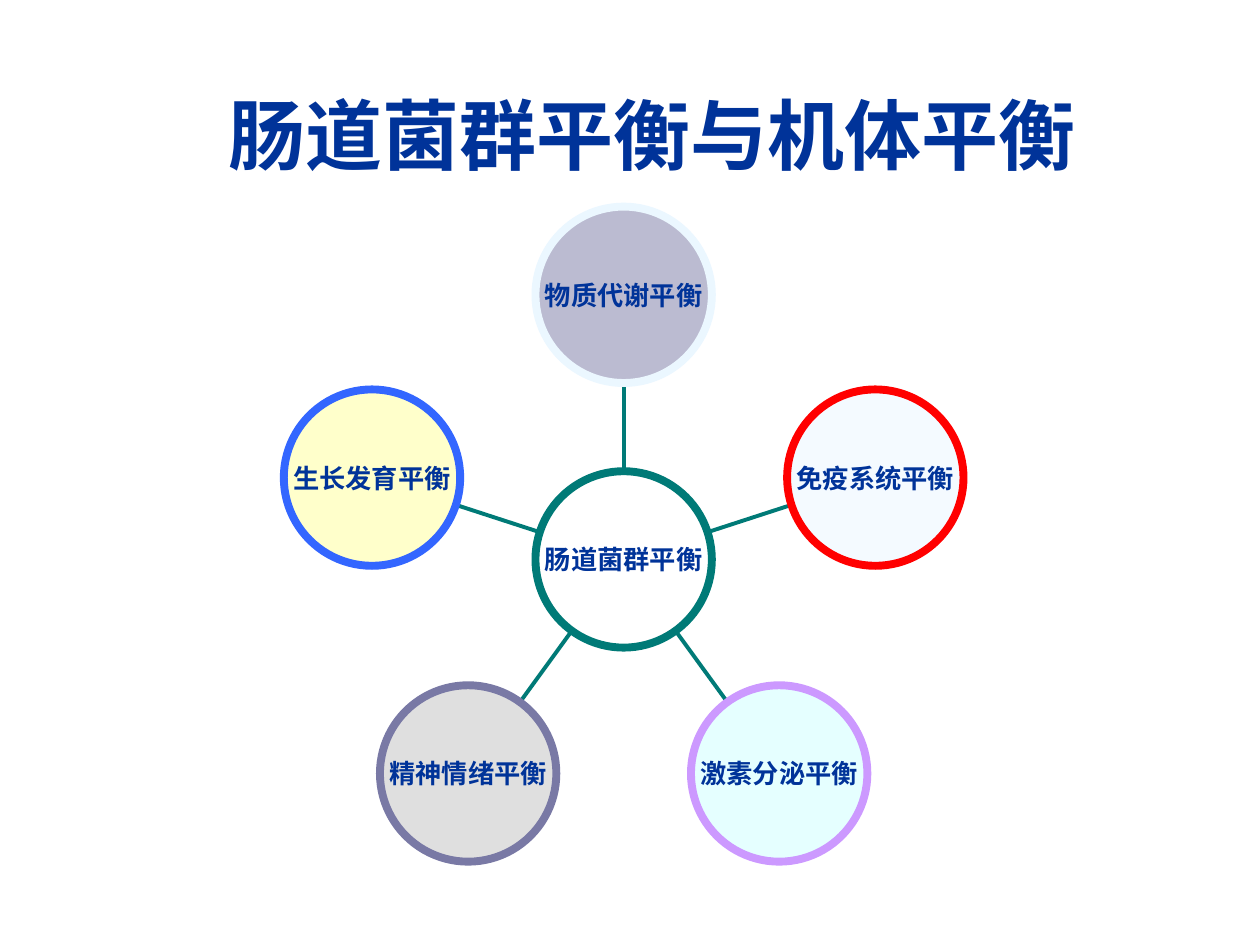
from math import cos, pi, sin

from lxml.etree import SubElement
from pptx import Presentation
from pptx.dml.color import RGBColor
from pptx.enum.shapes import MSO_CONNECTOR, MSO_SHAPE
from pptx.enum.text import MSO_ANCHOR, PP_ALIGN
from pptx.oxml.ns import qn
from pptx.util import Inches, Pt

NAVY, TEAL, CJK = "003399", "007A77", "Noto Sans CJK SC"
HUB = ("肠道菌群平衡", "FFFFFF", TEAL)
RING = [
    ("物质代谢平衡", "7979A5", "EBF7FF"),
    ("免疫系统平衡", "EBF7FF", "FF0000"),
    ("激素分泌平衡", "CCFFFF", "CC99FF"),
    ("精神情绪平衡", "C0C0C0", "7979A5"),
    ("生长发育平衡", "FFFF99", "3366FF"),
]


def paint(part, tone):
    """Give a fill or font colour a solid hex tone."""
    if hasattr(part, "solid"):
        part.solid()
        part.fore_color.rgb = RGBColor.from_string(tone)
    else:
        part.color.rgb = RGBColor.from_string(tone)


def write(frame, text, size, face):
    """Put one bold, centred line of text in a frame."""
    frame.text = text
    frame.vertical_anchor = MSO_ANCHOR.MIDDLE
    line = frame.paragraphs[0]
    line.alignment = PP_ALIGN.CENTER
    font = line.font
    font.size, font.bold, font.name = Pt(size), True, face
    paint(font, NAVY)
    SubElement(line._p.pPr.find(qn("a:defRPr")), qn("a:ea"), typeface=CJK)


def add_title(slide, box):
    """Place and format the title in its box."""
    title = slide.shapes.title
    title.left, title.top, title.width, title.height = map(Inches, box)
    write(title.text_frame, "肠道菌群平衡与机体平衡", 44, CJK)


def add_disc(slide, x, y, size, label, tone, edge):
    """Add a half-transparent labelled circle centred on a point."""
    box = (x - size / 2, y - size / 2, size, size)
    disc = slide.shapes.add_shape(MSO_SHAPE.OVAL, *map(Inches, box))
    disc.shadow.inherit = False
    paint(disc.fill, tone)
    hue = disc._element.spPr.find(qn("a:solidFill"))[0]
    SubElement(hue, qn("a:alpha"), val="50000")
    paint(disc.line, edge)
    disc.line.width = Pt(4.5)
    frame = disc.text_frame
    frame.word_wrap = False
    frame.margin_left = frame.margin_right = 0
    frame.margin_top = frame.margin_bottom = 0
    write(frame, label, 15, "Arial")


def add_spoke(slide, start, end):
    """Add a plain teal line between two points."""
    spoke = slide.shapes.add_connector(
        MSO_CONNECTOR.STRAIGHT, *map(Inches, start + end))
    paint(spoke.line, TEAL)
    spoke.line.width = Pt(2.25)
    SubElement(spoke._element.spPr, qn("a:effectLst"))


def add_wheel(slide, box):
    """Set five discs evenly around a hub, joined by spokes."""
    left, top, size = box
    x, y = left + size / 2, top + size / 2
    disc = size / 4
    orbit = (size - disc) / 2

    def spot(angle, reach):
        """Return the point at an angle from the top of the wheel."""
        return x + reach * sin(angle), y - reach * cos(angle)

    for i, node in enumerate(RING):
        angle = 2 * pi * i / len(RING)
        add_spoke(slide, spot(angle, disc / 2), spot(angle, orbit - disc / 2))
        add_disc(slide, *spot(angle, orbit), disc, *node)
    add_disc(slide, x, y, disc, *HUB)


def main():
    """Build and save the slide."""
    deck = Presentation()
    deck.slide_width, deck.slide_height = Inches(10), Inches(7.5)
    slide = deck.slides.add_slide(deck.slide_layouts[5])
    add_title(slide, (0.51, 0.44, 9.34, 1.25))
    add_wheel(slide, (2.15, 1.64, 5.6))
    deck.save("out.pptx")


if __name__ == "__main__":
    main()
